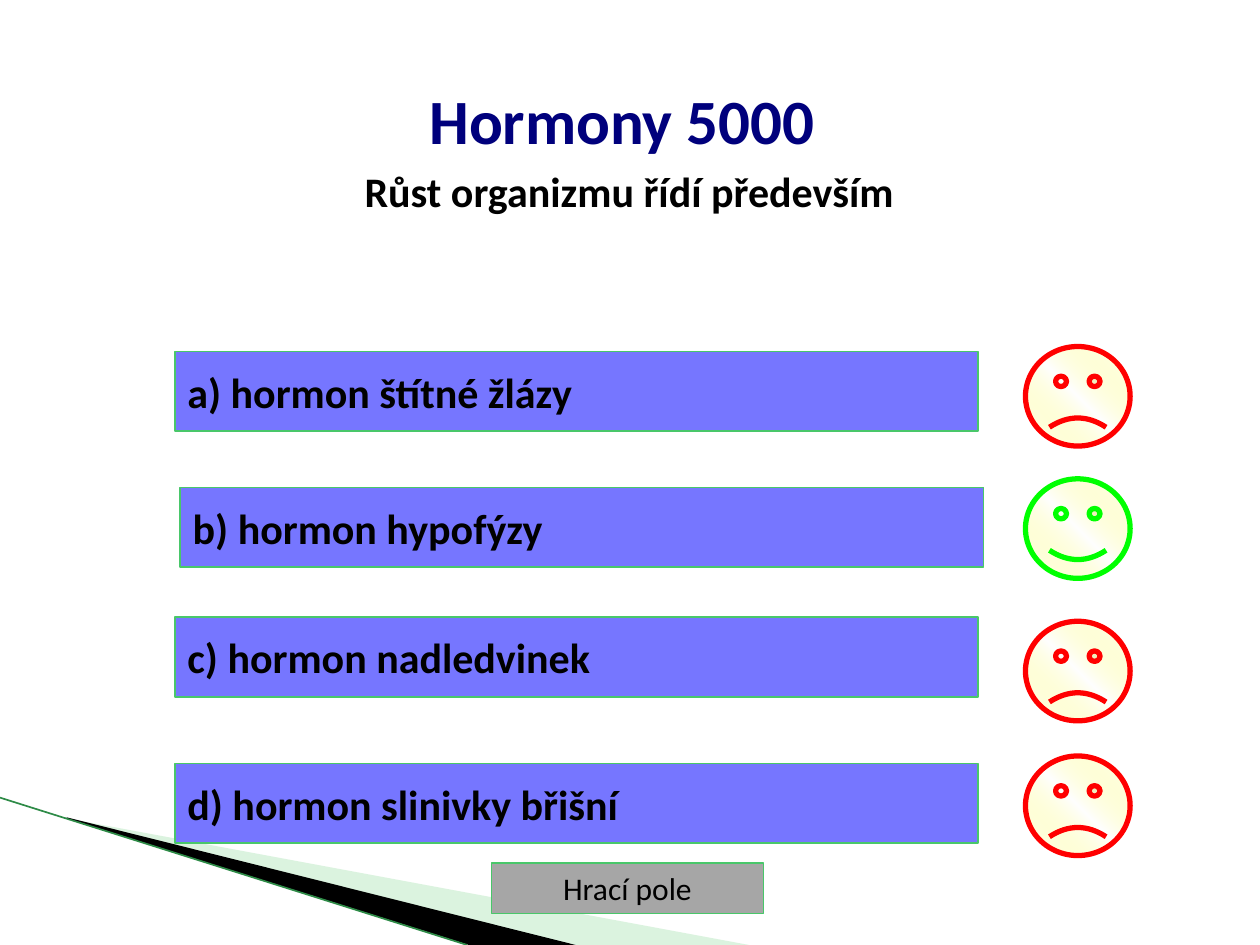
"""Build a quiz slide about hormones with four answers and smiley marks."""
from lxml.etree import SubElement
from pptx import Presentation
from pptx.dml.color import RGBColor
from pptx.enum.shapes import MSO_CONNECTOR, MSO_SHAPE
from pptx.enum.text import MSO_ANCHOR, MSO_AUTO_SIZE, PP_ALIGN
from pptx.oxml import parse_xml
from pptx.oxml.ns import nsdecls, qn
from pptx.util import Pt

HEADS = [("Hormony 5000 ", "head"), ("Růst organizmu řídí především", "ask")]
ANSWERS = [
    ("a) hormon štítné žlázy", 100, 200.9, 198, False),
    ("b) hormon hypofýzy", 103, 278.6, 273.6, True),
    ("c) hormon nadledvinek", 100, 352.8, 355, False),
    ("d) hormon slinivky břišní", 100, 436.3, 432, False),
]
BUTTON = ("Hrací pole", (280.8, 493.2, 155.5, 28.8))
WEDGES = [
    ("mint", 40, [(39.6, 468.4), (428.4, 540), (328.3, 540), (39.6, 468)]),
    ("black", 100, [(38.2, 467.3), (329, 540), (267.8, 540), (38.9, 468)]),
]
EDGE = (0, 455.8, 267, 540)
BAR, FACE = (459, 45.4), (586, 59.8, 56.9)

THEME = {
    "font": "Calibri",
    "mint": "A5E1AF", "black": "000000", "edge": "2E8B47",
    "bar": "7676FF", "grey": "A6A6A6", "rim": "49C76A",
    "right": "00FF00", "wrong": "FF0000", "glow": ("FFFFFF", "FFFF66"),
    "head": {"size": Pt(36), "bold": True, "color": "00007C"},
    "ask": {"size": Pt(24), "bold": True, "color": "000000"},
    "link": {"size": Pt(18), "bold": False, "color": "000000"},
}


def tint(name):
    return RGBColor.from_string(THEME[name])


def style(para, role):
    para.font.name = THEME["font"]
    for key, value in THEME[role].items():
        if key == "color":
            para.font.color.rgb = RGBColor.from_string(value)
        else:
            setattr(para.font, key, value)


def wedge(shapes, fill, alpha, points):
    form = shapes.build_freeform(*points[0], scale=12700)
    form.add_line_segments(points[1:], close=True)
    shape = form.convert_to_shape()
    shape.shadow.inherit = False
    shape.fill.solid()
    shape.fill.fore_color.rgb = tint(fill)
    shape.line.fill.background()
    if alpha < 100:
        color = shape.fill._xPr.find(".//" + qn("a:srgbClr"))
        SubElement(color, qn("a:alpha"), val=str(alpha * 1000))


def edge(shapes):
    line = shapes.add_connector(MSO_CONNECTOR.STRAIGHT, *map(Pt, EDGE))
    line.line.color.rgb = tint("edge")
    line.line.width = Pt(0.95)
    SubElement(line._element.spPr, qn("a:effectLst"))


def button(shapes, text, box, fill, width, role, align):
    shape = shapes.add_shape(MSO_SHAPE.ACTION_BUTTON_CUSTOM, *map(Pt, box))
    shape.shadow.inherit = False
    shape.fill.solid()
    shape.fill.fore_color.rgb = tint(fill)
    shape.line.color.rgb = tint("rim")
    shape.line.width = Pt(width)
    frame = shape.text_frame
    frame.word_wrap = False
    frame.vertical_anchor = MSO_ANCHOR.MIDDLE
    para = frame.paragraphs[0]
    para.text, para.alignment = text, align
    style(para, role)


def face(shapes, top, good):
    left, width, height = FACE
    shape = shapes.add_shape(MSO_SHAPE.SMILEY_FACE, *map(Pt, (left, top, width, height)))
    shape.adjustments[0] = 0.047 if good else -0.047
    shape.shadow.inherit = False
    shape.line.color.rgb = tint("right" if good else "wrong")
    shape.line.width = Pt(3)
    pale, warm = THEME["glow"]
    grad = parse_xml(
        f'<a:gradFill {nsdecls("a")} rotWithShape="1"><a:gsLst>'
        f'<a:gs pos="0"><a:srgbClr val="{pale}"/></a:gs>'
        f'<a:gs pos="50000"><a:srgbClr val="{warm}"><a:alpha val="0"/></a:srgbClr></a:gs>'
        f'<a:gs pos="100000"><a:srgbClr val="{pale}"/></a:gs>'
        '</a:gsLst><a:lin ang="18900000" scaled="1"/></a:gradFill>')
    shape._element.spPr.find(qn("a:prstGeom")).addnext(grad)


def title(shape):
    shape.left, shape.top, shape.width, shape.height = map(Pt, (19.4, 43.2, 680.4, 56.9))
    frame = shape.text_frame
    frame.auto_size = MSO_AUTO_SIZE.NONE
    frame.vertical_anchor = MSO_ANCHOR.TOP
    frame.word_wrap = True
    for i, (text, role) in enumerate(HEADS):
        para = frame.add_paragraph() if i else frame.paragraphs[0]
        para.text, para.alignment = text, PP_ALIGN.CENTER
        para.space_before = Pt(4.8 if i else 0)
        style(para, role)


def main():
    deck = Presentation()
    deck.slide_width, deck.slide_height = Pt(720), Pt(540)
    slide = deck.slides.add_slide(deck.slide_layouts[5])
    shapes = slide.shapes
    title(shapes.title)
    for item in WEDGES:
        wedge(shapes, *item)
    edge(shapes)
    button(shapes, *BUTTON, "grey", 0.75, "link", PP_ALIGN.CENTER)
    for text, left, top, mark, good in ANSWERS:
        button(shapes, text, (left, top, *BAR), "bar", 1, "ask", PP_ALIGN.LEFT)
        face(shapes, mark, good)
    deck.save("out.pptx")


if __name__ == "__main__":
    main()
